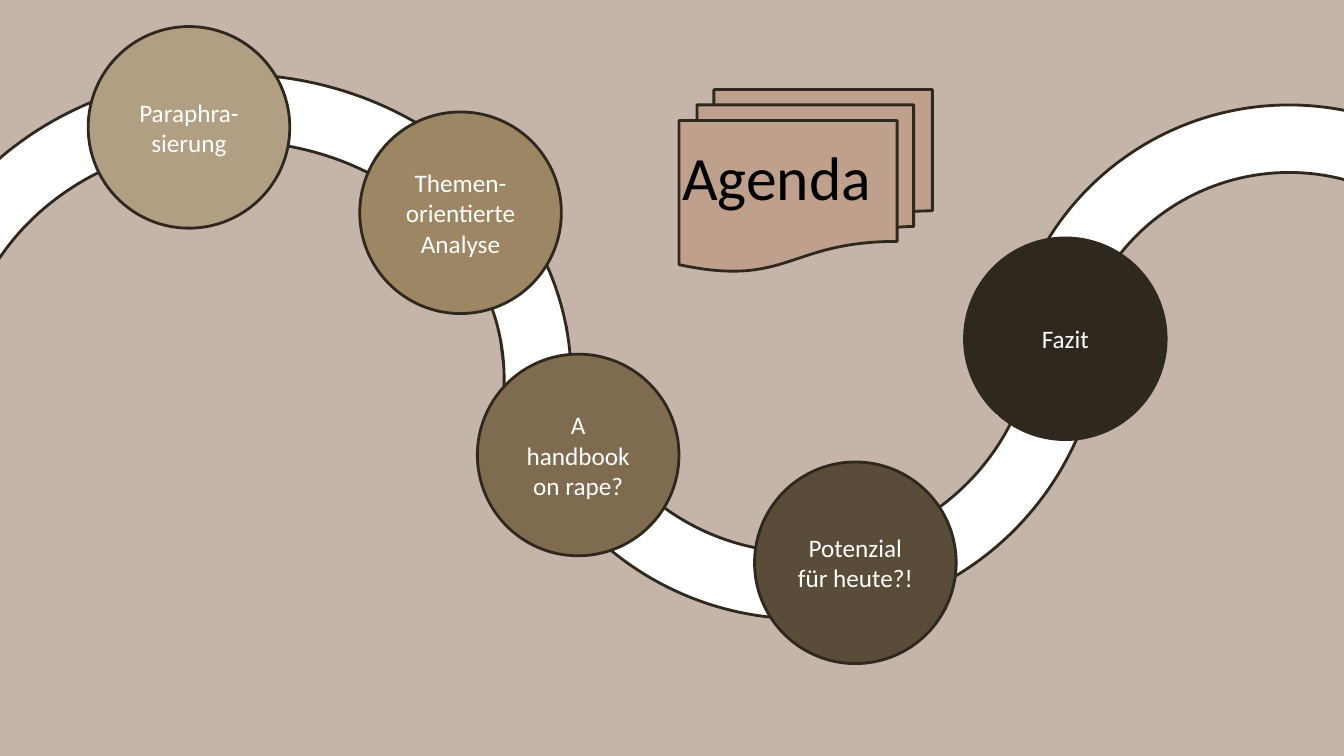
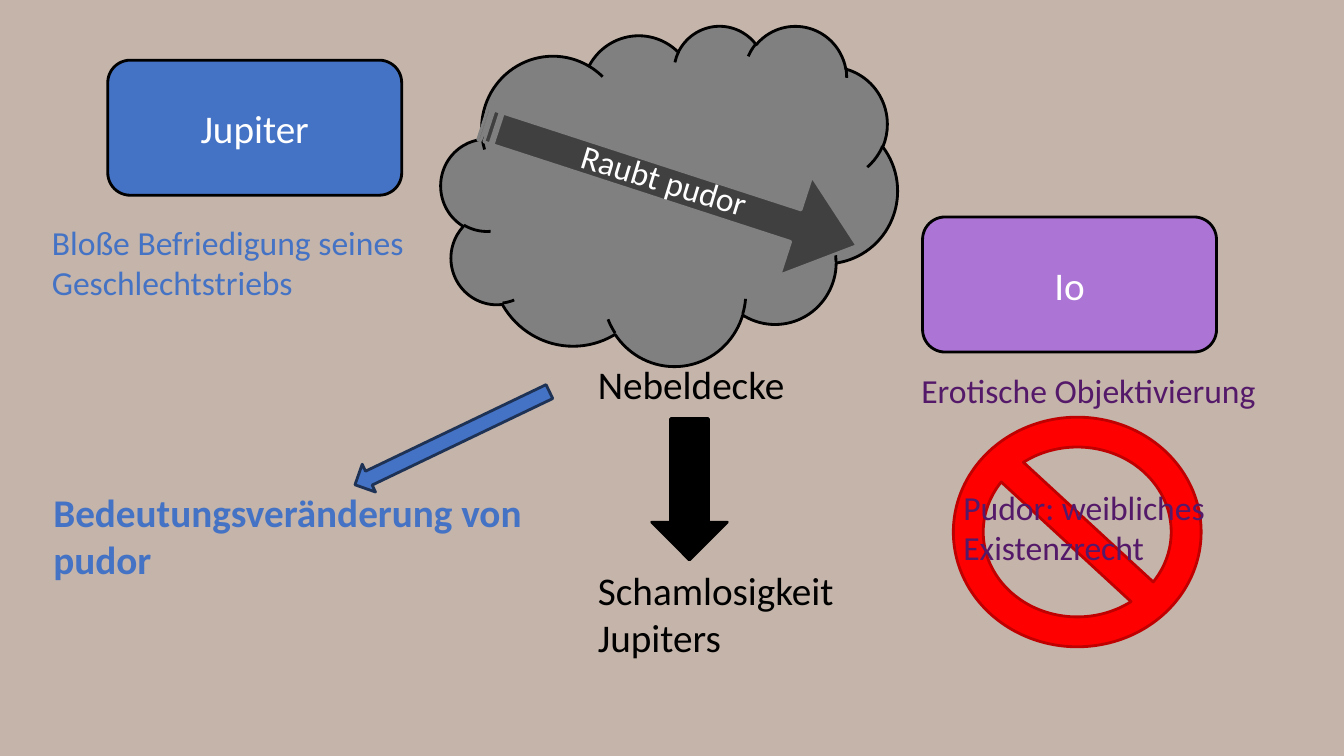
import pptx
import pptx.util
import pptx.dml.color
import pptx.enum.shapes
import pptx.enum.text

Pt = pptx.util.Pt
RGB = pptx.dml.color.RGBColor
SHAPE = pptx.enum.shapes.MSO_SHAPE
ALIGN = pptx.enum.text.PP_ALIGN
ANCHOR = pptx.enum.text.MSO_ANCHOR

BACKGROUND = RGB(0xC4, 0xB4, 0xA9)
WHITE = RGB(0xFF, 0xFF, 0xFF)
BLACK = RGB(0x00, 0x00, 0x00)
DARK_BROWN = RGB(0x2F, 0x28, 0x1E)
CARD = RGB(0xBF, 0xA0, 0x8C)
GREY = RGB(0x80, 0x80, 0x80)
DARK_GREY = RGB(0x40, 0x40, 0x40)
BLUE = RGB(0x44, 0x72, 0xC4)
NAVY = RGB(0x1E, 0x32, 0x56)
LILAC = RGB(0xAB, 0x74, 0xD5)
PURPLE = RGB(0x55, 0x19, 0x6A)
RED = RGB(0xFF, 0x00, 0x00)
DARK_RED = RGB(0xC0, 0x00, 0x00)

FONT = "Calibri"
WIDTH, HEIGHT = 960, 540
CIRCLE = 144
TITLE_ONLY, BLANK = 5, 6

# kind, box, rotation, adjustments, line
PATH = [
    (SHAPE.BLOCK_ARC, (357, 7, 431, 435), 0, (213.27, 106.24, 0.11), DARK_BROWN),
    (SHAPE.BLOCK_ARC, (-75, 53, 483, 435), 0, (109.76, 2.73, 0.11), DARK_BROWN),
    (SHAPE.BLOCK_ARC, (719, 75, 404, 402), 4.7, (107.28, 1.24, 0.12), DARK_BROWN),
    (SHAPE.MATH_MINUS, (706, 169, 69, 214), 101.3, (0.22,), WHITE),
]
STATIONS = [
    (63, 19, "Paraphra-\nsierung", RGB(0xB1, 0x9F, 0x84)),
    (257, 80, "Themen-\norientierte Analyse", RGB(0x9D, 0x86, 0x64)),
    (341, 253, "A handbook on rape?", RGB(0x7F, 0x6C, 0x50)),
    (539, 330, "Potenzial für heute?!", RGB(0x59, 0x4C, 0x38)),
    (689, 170, "Fazit", DARK_BROWN),
]


def new_slide(prs, layout):
    slide = prs.slides.add_slide(prs.slide_layouts[layout])
    slide.background.fill.solid()
    slide.background.fill.fore_color.rgb = BACKGROUND
    return slide


def write(sp, text, size, color, align=ALIGN.LEFT, anchor=ANCHOR.TOP, bold=False):
    tf = sp.text_frame
    tf.text = text
    tf.word_wrap = True
    tf.auto_size = pptx.enum.text.MSO_AUTO_SIZE.NONE
    tf.vertical_anchor = anchor
    for p in tf.paragraphs:
        p.alignment = align
        for r in p.runs:
            r.font.name = FONT
            r.font.size = Pt(size)
            r.font.bold = bold
            r.font.color.rgb = color


def add_shape(slide, kind, box, fill, line, rotation=0, adjustments=()):
    sp = slide.shapes.add_shape(kind, *map(Pt, box))
    sp.shadow.inherit = False
    sp.fill.solid()
    sp.fill.fore_color.rgb = fill
    sp.line.color.rgb = line
    sp.line.width = Pt(2)
    sp.rotation = rotation
    for i, value in enumerate(adjustments):
        sp.adjustments[i] = value
    return sp


def add_text(slide, box, text, size, color, rotation=0, bold=False):
    sp = slide.shapes.add_textbox(*map(Pt, box))
    sp.rotation = rotation
    write(sp, text, size, color, bold=bold)


def title_card(slide, x, y, w, h):
    add_shape(slide, SHAPE.FLOWCHART_MULTIDOCUMENT, (x, y, w, h), CARD, DARK_BROWN)
    title = slide.shapes.title
    title.left, title.top = Pt(x - 5), Pt(y + 13)
    title.width, title.height = Pt(w + 60), Pt(104)
    write(title, "Agenda", 44, BLACK, anchor=ANCHOR.MIDDLE)
    title.text_frame.paragraphs[0].line_spacing = 0.9
    # bring the title in front of its card
    title.element.getparent().append(title.element)


def winding_path(slide, x, y):
    for kind, (left, top, w, h), rotation, adjustments, line in PATH:
        add_shape(slide, kind, (x + left, y + top, w, h), WHITE, line,
                  rotation, adjustments)
    for left, top, text, fill in STATIONS:
        sp = add_shape(slide, SHAPE.OVAL, (x + left, y + top, CIRCLE, CIRCLE),
                       fill, DARK_BROWN)
        write(sp, text, 18, WHITE, ALIGN.CENTER, ANCHOR.MIDDLE)


def agenda_slide(prs):
    slide = new_slide(prs, TITLE_ONLY)
    winding_path(slide, 0, 0)
    title_card(slide, 485, 64, 181, 130)


def cloud(slide, x, y, w, h):
    add_shape(slide, SHAPE.CLOUD, (x, y, w, h), GREY, BLACK)
    add_shape(slide, SHAPE.STRIPED_RIGHT_ARROW, (x + 23, y + 77, w - 45, 74),
              DARK_GREY, GREY, 18, (0.32, 0.62))
    add_text(slide, (x + 91, y + 96, 162, 36), "Raubt pudor", 24, WHITE, 17)
    add_text(slide, (x + 105, y + h - 7, 259, 40), "Nebeldecke", 28, BLACK)


def figure_box(slide, x, y, name, fill):
    sp = add_shape(slide, SHAPE.FLOWCHART_ALTERNATE_PROCESS, (x, y, 210, 96.5),
                   fill, BLACK)
    write(sp, name, 28, WHITE, ALIGN.CENTER, ANCHOR.MIDDLE)


def jupiter(slide, x, y):
    figure_box(slide, x, y, "Jupiter", BLUE)
    add_text(slide, (x - 47, y + 112, 288, 65),
             "Bloße Befriedigung seines Geschlechtstriebs", 24, BLUE)


def io_figure(slide, x, y):
    figure_box(slide, x, y, "Io", LILAC)
    add_text(slide, (x - 8, y + 106, 290, 36), "Erotische Objektivierung", 24, PURPLE)
    add_shape(slide, SHAPE.NO_SYMBOL, (x + 22, y + 143, 177, 164), RED, DARK_RED,
              adjustments=(0.13,))
    add_text(slide, (x + 22, y + 189, 278, 65),
             "Pudor: weibliches Existenzrecht", 24, PURPLE)


def consequences(slide, x, y):
    add_shape(slide, SHAPE.LEFT_ARROW, (x + 215, y + 3, 154, 22), BLUE, NAVY, 334.4)
    add_text(slide, (x, y + 46, 417, 74), "Bedeutungsveränderung von pudor",
             28, BLUE, bold=True)
    add_shape(slide, SHAPE.DOWN_ARROW, (x + 434.5, y, 54, 101), BLACK, BLACK)
    add_text(slide, (x + 389, y + 102, 228, 74), "Schamlosigkeit Jupiters", 28, BLACK)


def pudor_slide(prs):
    slide = new_slide(prs, BLANK)
    cloud(slide, 315, 18, 326, 243)
    jupiter(slide, 77, 43)
    io_figure(slide, 659, 155)
    consequences(slide, 31, 299)


def main():
    prs = pptx.Presentation()
    prs.slide_width, prs.slide_height = Pt(WIDTH), Pt(HEIGHT)
    agenda_slide(prs)
    pudor_slide(prs)
    prs.save("out.pptx")


if __name__ == "__main__":
    main()
